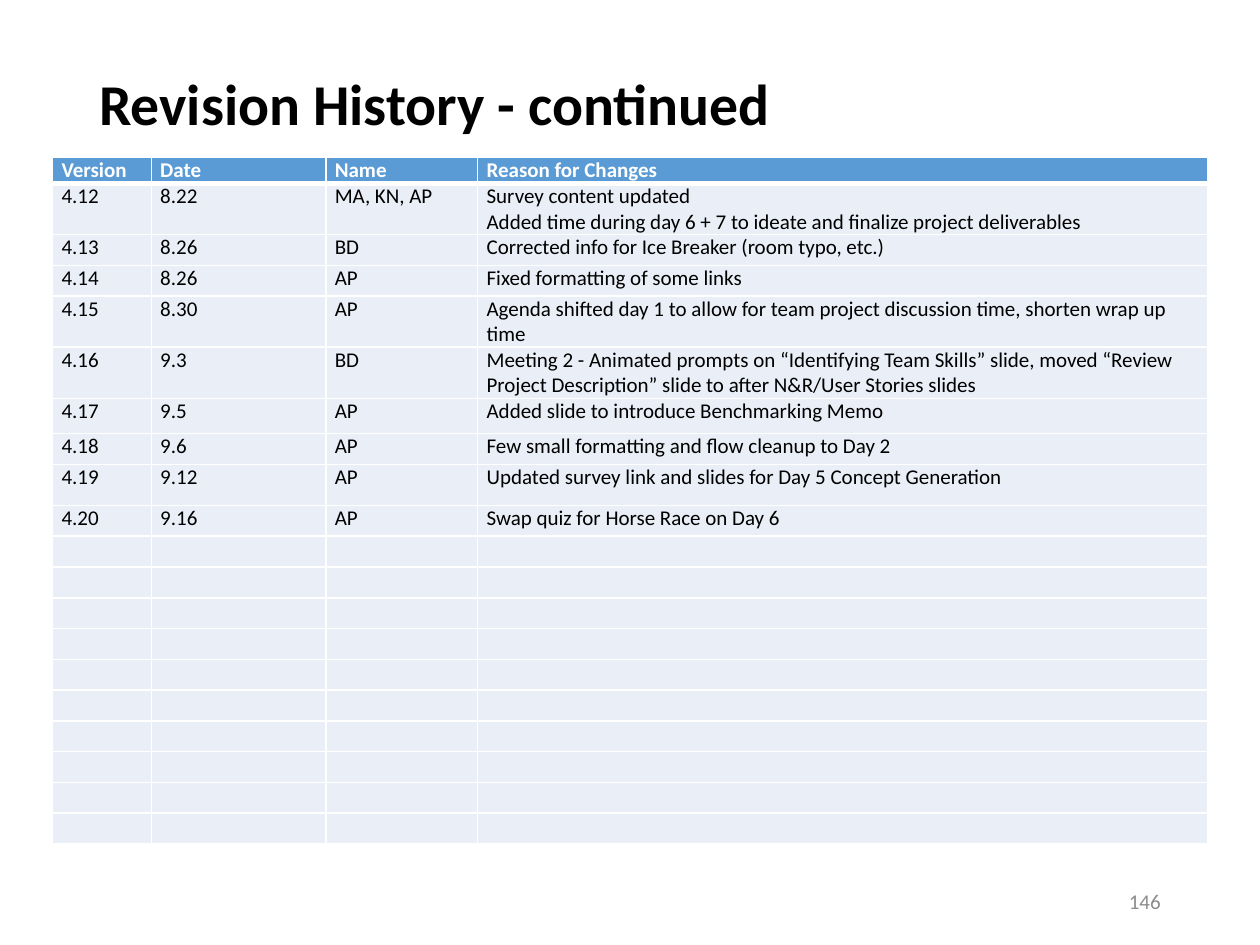
from lxml.etree import SubElement
from pptx import Presentation
from pptx.dml.color import RGBColor
from pptx.enum.text import MSO_ANCHOR as Anchor, PP_ALIGN as Align
from pptx.oxml.ns import qn
from pptx.util import Cm, Pt

COLORS = {
    "header": "5B9BD5",
    "body": "EAEFF7",
    "white": "FFFFFF",
    "black": "000000",
    "gray": "8C8C8C",
}
FONT = "Calibri"
TEXT_SIZE = 12
TITLE = "Revision History - continued"
PAGE_NUMBER = "146"
HEADINGS = ("Version", "Date", "Name", "Reason for Changes")
REVISIONS = [
    ("4.12", "8.22", "MA, KN, AP",
     "Survey content updated\n"
     "Added time during day 6 + 7 to ideate and finalize project deliverables"),
    ("4.13", "8.26", "BD", "Corrected info for Ice Breaker (room typo, etc.)"),
    ("4.14", "8.26", "AP", "Fixed formatting of some links"),
    ("4.15", "8.30", "AP",
     "Agenda shifted day 1 to allow for team project discussion time, shorten wrap up time"),
    ("4.16", "9.3", "BD",
     "Meeting 2 - Animated prompts on “Identifying Team Skills” slide, moved "
     "“Review Project Description” slide to after N&R/User Stories slides"),
    ("4.17", "9.5", "AP", "Added slide to introduce Benchmarking Memo"),
    ("4.18", "9.6", "AP", "Few small formatting and flow cleanup to Day 2"),
    ("4.19", "9.12", "AP", "Updated survey link and slides for Day 5 Concept Generation"),
    ("4.20", "9.16", "AP", "Swap quiz for Horse Race on Day 6"),
]
EMPTY_ROWS = 10
COLUMN_WIDTHS = (1.99, 3.52, 3.06, 14.72)
HEADER_HEIGHT = 0.52
ROW_HEIGHT = 0.62
TALL_ROWS = {"4.12": 1.03, "4.15": 1.03, "4.16": 1.03, "4.17": 0.71, "4.19": 0.83}


def write_text(frame, text, size=TEXT_SIZE, color="black", bold=False,
               align=Align.LEFT, line_spacing=None):
    for index, line in enumerate(text.split("\n")):
        paragraph = frame.add_paragraph() if index else frame.paragraphs[0]
        paragraph.alignment = align
        paragraph.line_spacing = line_spacing
        if not line:
            paragraph._p.get_or_add_endParaRPr().set("sz", str(size * 100))
            continue
        run = paragraph.add_run()
        run.text = line
        run.font.name = FONT
        run.font.size = Pt(size)
        run.font.bold = bold
        run.font.color.rgb = RGBColor.from_string(COLORS[color])


def add_text_box(slide, box, text, anchor, margin_top=0.13, **text_format):
    frame = slide.shapes.add_textbox(*map(Cm, box)).text_frame
    frame.word_wrap = True
    frame.vertical_anchor = anchor
    frame.margin_top = Cm(margin_top)
    write_text(frame, text, **text_format)


def add_borders(cell, **widths):
    properties = cell._tc.get_or_add_tcPr()
    for side in "LRTB":
        line = SubElement(properties, qn(f"a:ln{side}"), w=str(Pt(widths.get(side, 1))))
        fill = SubElement(line, qn("a:solidFill"))
        SubElement(fill, qn("a:srgbClr"), val=COLORS["white"])


def add_revision_table(slide, left, top):
    rows = [HEADINGS, *REVISIONS, *[("",) * len(HEADINGS)] * EMPTY_ROWS]
    heights = [HEADER_HEIGHT] + [TALL_ROWS.get(row[0], ROW_HEIGHT) for row in rows[1:]]
    table = slide.shapes.add_table(
        len(rows), len(HEADINGS), Cm(left), Cm(top),
        Cm(sum(COLUMN_WIDTHS)), Cm(sum(heights))).table
    table.horz_banding = False
    for column, width in zip(table.columns, COLUMN_WIDTHS):
        column.width = Cm(width)
    for row_index, (row, values, height) in enumerate(zip(table.rows, rows, heights)):
        row.height = Cm(height)
        is_header = row_index == 0
        for cell, value in zip(row.cells, values):
            cell.margin_left = cell.margin_right = Cm(0.18)
            cell.margin_top = cell.margin_bottom = 0
            add_borders(cell, T=3 if row_index == 1 else 1, B=3 if is_header else 1)
            cell.fill.solid()
            cell.fill.fore_color.rgb = RGBColor.from_string(
                COLORS["header" if is_header else "body"])
            write_text(cell.text_frame, value, bold=is_header,
                       color="white" if is_header else "black")


presentation = Presentation()
presentation.slide_width = Cm(25.4)
presentation.slide_height = Cm(19.05)
slide = presentation.slides.add_slide(presentation.slide_layouts[6])

add_text_box(slide, (1.75, 1.02, 21.9, 3.68), TITLE, Anchor.TOP, margin_top=0.51,
             size=33, bold=True, line_spacing=0.9)
add_revision_table(slide, 1.06, 3.18)
add_text_box(slide, (17.93, 17.65, 5.72, 1.02), PAGE_NUMBER, Anchor.MIDDLE,
             color="gray", align=Align.RIGHT)

presentation.save("out.pptx")
